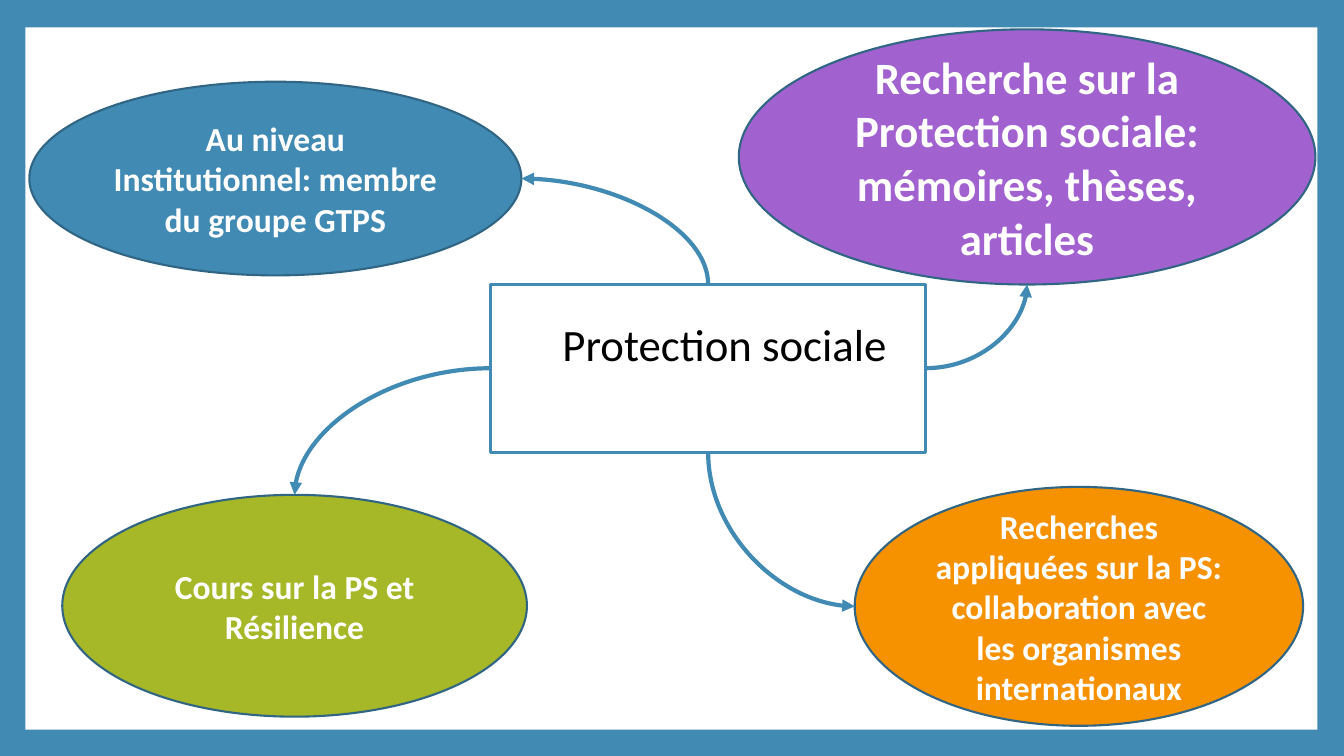
from dataclasses import dataclass

from lxml.etree import SubElement
from pptx import Presentation
from pptx.dml.color import RGBColor
from pptx.enum.shapes import MSO_CONNECTOR, MSO_SHAPE
from pptx.enum.text import MSO_ANCHOR, MSO_AUTO_SIZE, PP_ALIGN
from pptx.oxml.ns import qn
from pptx.util import Cm, Pt

FONT = "Calibri"
COLOURS = {
    "blue": "418AB3",
    "outline": "306684",
    "green": "A6B727",
    "purple": "A162D0",
    "orange": "F69200",
    "white": "FFFFFF",
    "black": "000000",
}


@dataclass(frozen=True)
class Box:
    left: float
    top: float
    width: float
    height: float

    def side(self, name: str) -> tuple[float, float]:
        """Return the middle point of one side, in centimetres."""
        across, down = {"left": (0, 0.5), "right": (1, 0.5),
                        "top": (0.5, 0), "bottom": (0.5, 1)}[name]
        return self.left + across * self.width, self.top + down * self.height

    def lengths(self) -> list[Cm]:
        return [Cm(v) for v in (self.left, self.top, self.width, self.height)]


@dataclass(frozen=True)
class Theme:
    text: str
    box: Box
    colour: str
    size: int
    leaves: str   # side of the central box where the arrow starts
    arrives: str  # side of the ellipse where the arrow ends


PANEL = Box(0.64, 0.69, 32.56, 17.7)
CENTRE = Box(12.37, 7.16, 10.95, 4.24)
TITLE = Box(13.92, 7.85, 8.69, 3)
THEMES = [
    Theme("Cours sur la PS et Résilience",
          Box(1.57, 12.47, 11.71, 5.59), "green", 24, "left", "top"),
    Theme("Recherche sur la Protection sociale: mémoires, thèses, articles",
          Box(18.62, 0.74, 14.53, 6.43), "purple", 32, "right", "bottom"),
    Theme("Au niveau Institutionnel: membre du groupe GTPS",
          Box(0.74, 2.06, 12.4, 4.88), "blue", 24, "top", "right"),
    Theme("Recherches appliquées sur la PS: collaboration avec "
          "les organismes internationaux",
          Box(21.54, 12.27, 11.3, 6.02), "orange", 24, "bottom", "left"),
]


def rgb(name: str) -> RGBColor:
    return RGBColor.from_string(COLOURS[name])


def add_box(slide, kind: MSO_SHAPE, box: Box, fill: str | None = None,
            line: str | None = None, line_width: float = 0):
    shape = slide.shapes.add_shape(kind, *box.lengths())
    shape.shadow.inherit = False
    if fill:
        shape.fill.solid()
        shape.fill.fore_color.rgb = rgb(fill)
    else:
        shape.fill.background()
    if line:
        shape.line.color.rgb = rgb(line)
        shape.line.width = Pt(line_width)
    else:
        shape.line.fill.background()
    return shape


def write(shape, text: str, size: int, colour: str, bold: bool,
          alignment: PP_ALIGN, anchor: MSO_ANCHOR) -> None:
    frame = shape.text_frame
    frame.text = text
    frame.word_wrap = True
    frame.vertical_anchor = anchor
    paragraph = frame.paragraphs[0]
    paragraph.alignment = alignment
    font = paragraph.font
    font.name, font.size, font.bold = FONT, Pt(size), bold
    font.color.rgb = rgb(colour)


def add_curved_arrow(slide, theme: Theme) -> None:
    x1, y1 = CENTRE.side(theme.leaves)
    x2, y2 = theme.box.side(theme.arrives)
    # The preset curve starts horizontally; turn it to start vertically
    vertical = theme.leaves in ("top", "bottom")
    if vertical:
        middle_x, middle_y = (x1 + x2) / 2, (y1 + y2) / 2
        half_x, half_y = (y1 - y2) / 2, (x2 - x1) / 2
        x1, y1 = middle_x - half_x, middle_y - half_y
        x2, y2 = middle_x + half_x, middle_y + half_y
    connector = slide.shapes.add_connector(
        MSO_CONNECTOR.CURVE, Cm(x1), Cm(y1), Cm(x2), Cm(y2))
    connector.line.color.rgb = rgb("blue")
    connector.line.width = Pt(3)

    properties = connector._element.spPr
    properties.find(qn("a:prstGeom")).set("prst", "curvedConnector2")
    if vertical:
        properties.find(qn("a:xfrm")).set("rot", str(270 * 60000))
    SubElement(properties.find(qn("a:ln")), qn("a:tailEnd"), type="triangle")
    SubElement(properties, qn("a:effectLst"))


def main() -> None:
    presentation = Presentation()
    presentation.slide_width = Cm(33.87)
    presentation.slide_height = Cm(19.05)
    slide = presentation.slides.add_slide(presentation.slide_layouts[5])

    # Blue frame around a white panel
    slide.background.fill.solid()
    slide.background.fill.fore_color.rgb = rgb("blue")
    add_box(slide, MSO_SHAPE.RECTANGLE, PANEL, fill="white")

    # Central box, themes and their arrows
    add_box(slide, MSO_SHAPE.RECTANGLE, CENTRE, line="blue", line_width=2)
    for theme in THEMES:
        ellipse = add_box(slide, MSO_SHAPE.OVAL, theme.box, theme.colour,
                          "outline", 1.5)
        write(ellipse, theme.text, theme.size, "white", True,
              PP_ALIGN.CENTER, MSO_ANCHOR.MIDDLE)
        add_curved_arrow(slide, theme)

    # Title, brought in front of the panel
    title = slide.shapes.title
    title.left, title.top, title.width, title.height = TITLE.lengths()
    write(title, "Protection sociale", 32, "black", False,
          PP_ALIGN.LEFT, MSO_ANCHOR.TOP)
    title.text_frame.auto_size = MSO_AUTO_SIZE.NONE
    slide.shapes._spTree.append(title._element)

    presentation.save("out.pptx")


if __name__ == "__main__":
    main()
